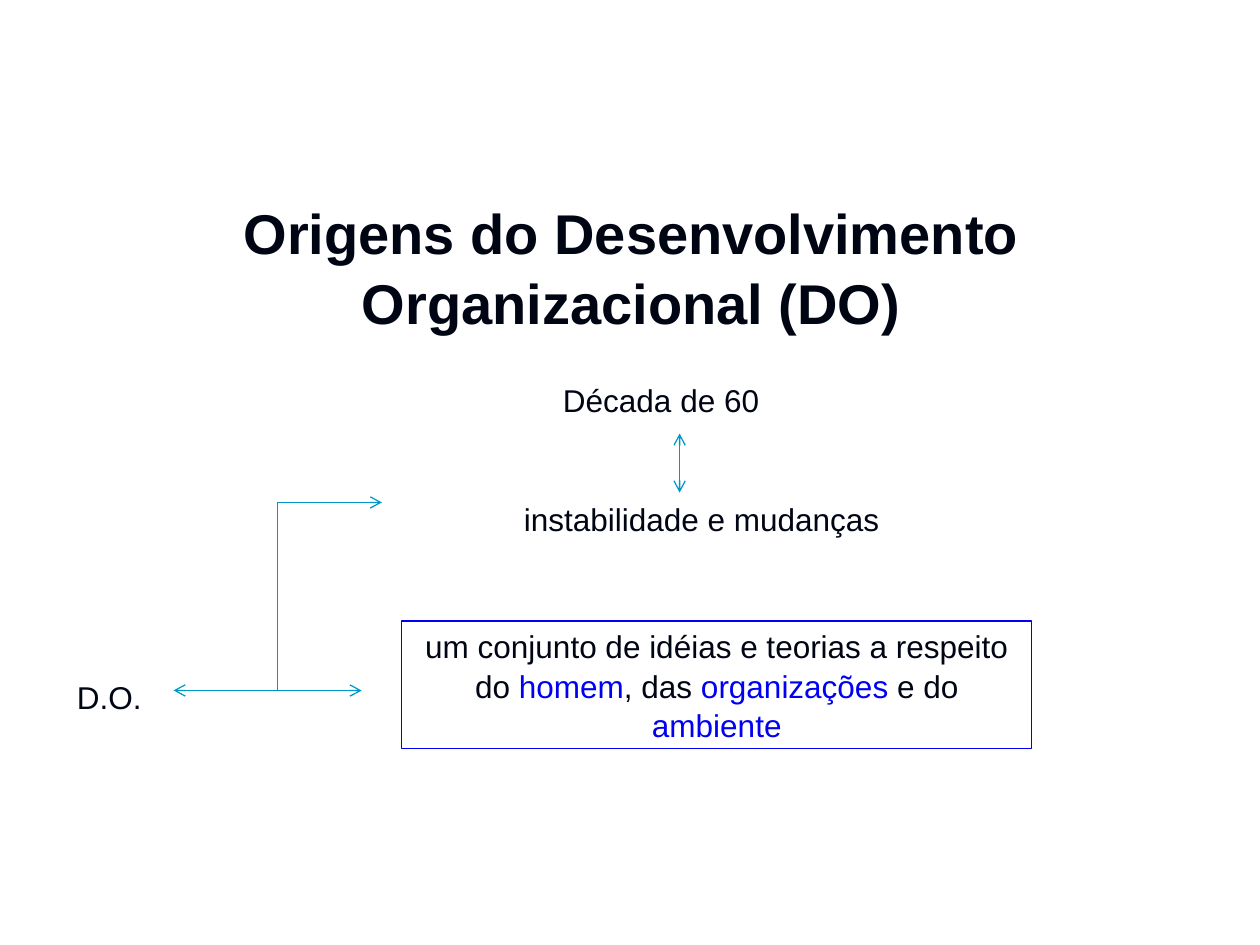
from lxml.etree import SubElement
from pptx import Presentation
from pptx.dml.color import RGBColor
from pptx.enum.shapes import MSO_CONNECTOR, MSO_SHAPE
from pptx.enum.text import MSO_ANCHOR, PP_ALIGN
from pptx.oxml.ns import qn
from pptx.util import Cm, Pt

INK, BLUE, CYAN = "000514", "0000F2", "0096C8"


def rgb(value):
    return RGBColor.from_string(value)


class Deck:
    """Holds the text style and the slide being drawn."""

    font, size, weight = "Arial", 18, 0.75

    def __init__(self, slide):
        self.s = slide

    def add_text(self, sp, runs, size=None, bold=False, align=PP_ALIGN.LEFT, spacing=1.04, wrap=True):
        tf = sp.text_frame
        tf.word_wrap = wrap
        p = tf.paragraphs[0]
        p.alignment = align
        p.line_spacing = spacing
        for text, color in runs:
            r = p.add_run()
            r.text = text
            r.font.name = self.font
            r.font.size = Pt(size or self.size)
            r.font.bold = bold
            r.font.color.rgb = rgb(color)

    def title(self, text, x, y, w, h):
        sp = self.s.shapes.add_textbox(Cm(x), Cm(y), Cm(w), Cm(h))
        self.add_text(sp, [(text, INK)], size=32, bold=True, align=PP_ALIGN.CENTER, spacing=1.05)
        sp.text_frame.vertical_anchor = MSO_ANCHOR.MIDDLE
        sp.text_frame.margin_bottom = Cm(1.5)

    def label(self, text, x, y, w, wrap=False):
        sp = self.s.shapes.add_textbox(Cm(x), Cm(y), Cm(w), Cm(1.02))
        self.add_text(sp, [(text, INK)], wrap=wrap)

    def frame(self, runs, x, y, w, h):
        sp = self.s.shapes.add_shape(MSO_SHAPE.RECTANGLE, Cm(x), Cm(y), Cm(w), Cm(h))
        sp.shadow.inherit = False
        sp.fill.background()
        sp.line.color.rgb = rgb(BLUE)
        sp.line.width = Pt(self.weight)
        self.add_text(sp, runs, align=PP_ALIGN.CENTER)

    def arrow(self, start, end, kind=MSO_CONNECTOR.STRAIGHT, both=True):
        sp = self.s.shapes.add_connector(kind, *map(Cm, start + end))
        sp.line.color.rgb = rgb(CYAN)
        sp.line.width = Pt(self.weight)
        ln = sp._element.spPr.find(qn("a:ln"))
        for tag in ("a:headEnd", "a:tailEnd") if both else ("a:tailEnd",):
            SubElement(ln, qn(tag), type="arrow")
        SubElement(sp._element.spPr, qn("a:effectLst"))


def main():
    prs = Presentation()
    prs.slide_width, prs.slide_height = Cm(25.4), Cm(19.05)
    deck = Deck(prs.slides.add_slide(prs.slide_layouts[6]))

    deck.title("Origens do Desenvolvimento Organizacional (DO)", 1.3, 4.93, 22.86, 2.21)
    deck.label("Década de 60", 11.1, 7.52, 4.5)
    deck.label("instabilidade e mudanças", 10.31, 9.93, 7.75)
    deck.frame(
        [
            ("um conjunto de idéias e teorias a respeito do ", INK),
            ("homem", BLUE),
            (", das ", INK),
            ("organizações", BLUE),
            (" e do ", INK),
            ("ambiente", BLUE),
        ],
        8.1, 12.52, 12.7, 2.57,
    )
    deck.label("D.O.", 1.3, 13.51, 3, wrap=True)

    deck.arrow((13.7, 8.74), (13.7, 9.93))
    deck.arrow((3.5, 13.92), (7.7, 10.13), kind=MSO_CONNECTOR.ELBOW)
    deck.arrow((5.51, 13.92), (7.29, 13.92), both=False)

    prs.save("out.pptx")


if __name__ == "__main__":
    main()
